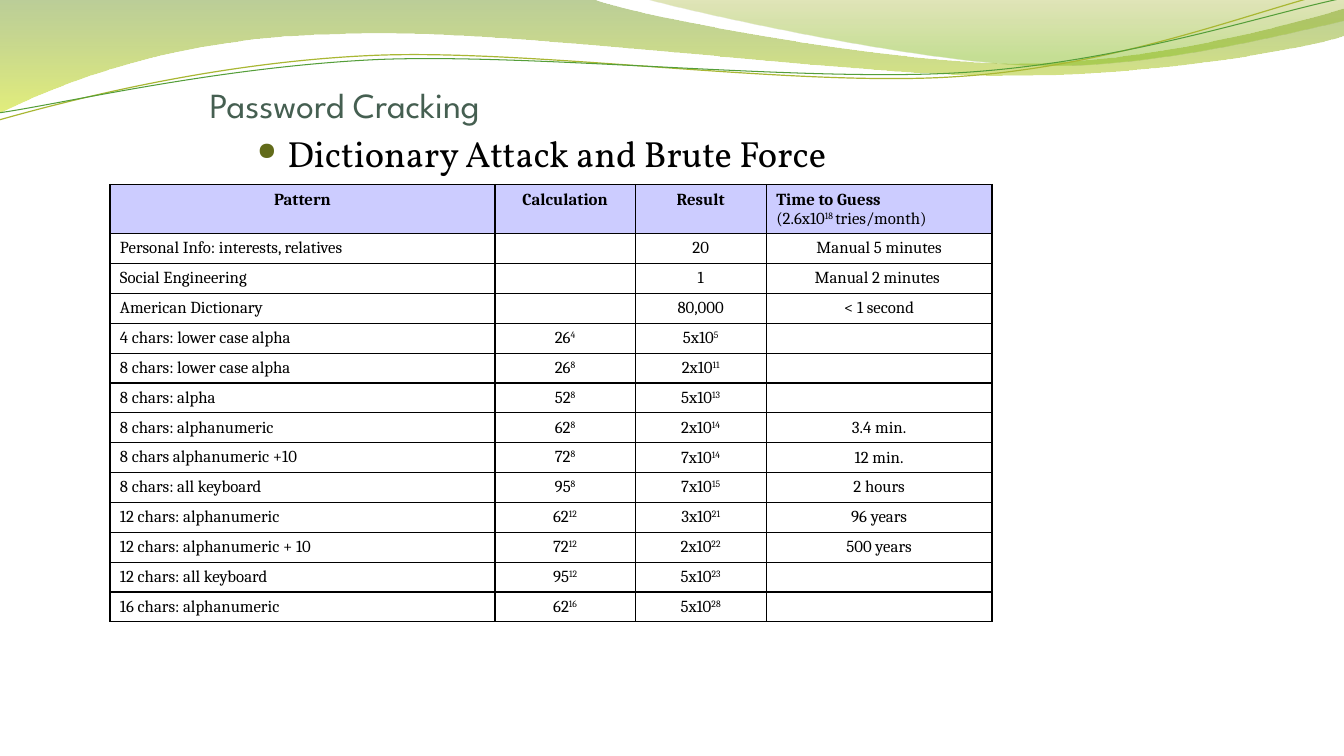
from lxml.etree import SubElement
from pptx import Presentation
from pptx.dml.color import RGBColor
from pptx.enum.text import MSO_ANCHOR, PP_ALIGN
from pptx.oxml import parse_xml
from pptx.oxml.ns import nsdecls, qn
from pptx.util import Inches, Pt

TITLE = "Password Cracking"
SUBTITLE = "Dictionary Attack and Brute Force"

# Text between a pair of ^ marks is superscript.
ROWS = [
    ("Pattern", "Calculation", "Result", "Time to Guess\n(2.6x10^18 ^tries/month)"),
    ("Personal Info: interests, relatives", "", "20", "Manual 5 minutes"),
    ("Social Engineering", "", "1", "Manual 2 minutes "),
    ("American Dictionary", "", "80,000", "< 1 second"),
    ("4 chars: lower case alpha", "26^4", "5x10^5", ""),
    ("8 chars: lower case alpha", "26^8", "2x10^11", ""),
    ("8 chars: alpha", "52^8", "5x10^13", ""),
    ("8 chars: alphanumeric", "62^8", "2x10^14", "3.4 min."),
    ("8 chars alphanumeric +10", "72^8", "7x10^14", "12 min."),
    ("8 chars: all keyboard", "95^8", "7x10^15", "2 hours"),
    ("12 chars: alphanumeric", "62^12", "3x10^21", "96 years"),
    ("12 chars: alphanumeric + 10", "72^12", "2x10^22", "500 years"),
    ("12 chars: all keyboard", "95^12", "5x10^23", ""),
    ("16 chars: alphanumeric", "62^16", "5x10^28", ""),
]
COLUMN_WIDTHS = [3.82, 1.39, 1.3, 2.24]
TABLE_HEIGHT, HEADER_HEIGHT = 4.34, 0.49
FIRST_POWER_ROW = 4

# A pair is a straight step, six numbers are a Bézier step.
BANDS = [
    {"outline": [(0, 0), (5.87, -0.01), (6.34, 0.17, 8.84, 0.63, 10.11, 0.63),
                 (11.37, 0.63, 12.77, 0.26, 13.33, 0.09), (13.34, 0.36),
                 (13.11, 0.44, 11.59, 0.76, 9.94, 0.75),
                 (8.29, 0.75, 5.09, 0.28, 3.43, 0.34),
                 (1.72, 0.36, 0.61, 0.83, -0.02, 1.13), (0, 0)],
     "stops": [(0, "69921C", 45), (1, "CCE10F", 55)]},
    {"outline": [(6.38, -0.01), (6.79, 0.11, 9.09, 0.62, 10.25, 0.65),
                 (11.4, 0.69, 12.82, 0.32, 13.33, 0.21), (13.33, 0), (6.38, -0.01)],
     "stops": [(0, "9BAA1A", 30), (0.8, "81BA16", 45)]},
]
STRANDS = [
    {"outline": [(-0.01, 1.19), (0.63, 1.01, 2.1, 0.62, 3.69, 0.55),
                 (5.27, 0.48, 7.89, 0.87, 9.49, 0.76),
                 (11.1, 0.66, 12.51, 0.08, 13.3, -0.1)],
     "color": "A9B733", "width": 0.85},
    {"outline": [(-0.01, 1.12), (0.62, 1.03, 2.18, 0.66, 3.77, 0.59),
                 (5.37, 0.53, 7.96, 0.82, 9.55, 0.72),
                 (11.14, 0.62, 12.55, 0.14, 13.33, -0.02)],
     "color": "549E39", "width": 0.75},
]


def rgb(code):
    return RGBColor.from_string(code)


def style_font(font, color="000000", **values):
    for key, value in values.items():
        setattr(font, key, value)
    font.color.rgb = rgb(color)


def add_outline(shapes, outline, closed):
    """Draw the steps as a polygon, then join each Bézier step's three points into a curve."""
    points = [(Inches(step[i]), Inches(step[i + 1]))
              for step in outline for i in range(0, len(step), 2)]
    builder = shapes.build_freeform(*points[0])
    builder.add_line_segments(points[1:], close=closed)
    wave = builder.convert_to_shape()
    wave.shadow.inherit = False
    segments = iter(list(wave._element.iter(qn("a:lnTo"))))
    for step in outline[1:]:
        segment = next(segments)
        if len(step) == 6:
            segment.addprevious(curve := parse_xml(f'<a:cubicBezTo {nsdecls("a")}/>'))
            for part in (segment, next(segments), next(segments)):
                curve.append(part[0])
                part.getparent().remove(part)
    return wave


def add_waves(shapes):
    for band in BANDS:
        wave = add_outline(shapes, band["outline"], True)
        wave.line.fill.background()
        wave.fill.gradient()
        wave.fill.gradient_angle = 270
        for stop, (position, color, opacity) in zip(wave.fill.gradient_stops, band["stops"]):
            stop.position = position
            stop.color.rgb = rgb(color)
            color_xml = stop._gs.find(qn("a:srgbClr"))
            SubElement(color_xml, qn("a:alpha")).set("val", str(opacity * 1000))
    for strand in STRANDS:
        wave = add_outline(shapes, strand["outline"], False)
        wave.fill.background()
        wave.line.color.rgb = rgb(strand["color"])
        wave.line.width = Pt(strand["width"])


def place_title(shapes):
    title = shapes.title
    shapes._spTree.append(title._element)  # in front of the waves
    title.left, title.top, title.width, title.height = map(Inches, (2.08, 0.75, 6.58, 0.5))
    frame = title.text_frame
    frame.text = TITLE
    frame.vertical_anchor = MSO_ANCHOR.BOTTOM
    frame.margin_left = frame.margin_right = frame.margin_bottom = 0
    frame.margin_top = Inches(0.05)
    line = frame.paragraphs[0]
    line.alignment = PP_ALIGN.LEFT
    style_font(line.runs[0].font, "455F51", name="League Spartan", size=Pt(25.2))


def add_subtitle(shapes):
    frame = shapes.add_textbox(*map(Inches, (1, 1.25, 8.75, 0.53))).text_frame
    frame.word_wrap = True
    line = frame.paragraphs[0]
    line.alignment = PP_ALIGN.CENTER
    run = line.add_run()
    run.text = SUBTITLE
    style_font(run.font, name="Vollkorn", size=Pt(26))
    properties = line._p.get_or_add_pPr()
    properties.set("marL", str(Inches(0.3)))
    properties.set("indent", str(Inches(-0.3)))
    for xml in ('<a:spcBef {}><a:spcPct val="20000"/></a:spcBef>',
                '<a:buClr {}><a:srgbClr val="626B1A"/></a:buClr>',
                '<a:buSzPct {} val="68000"/>',
                '<a:buChar {} char="●"/>'):
        properties.append(parse_xml(xml.format(nsdecls("a"))))


def add_borders(cell):
    for side in ("lnL", "lnR", "lnT", "lnB"):
        cell._tc.get_or_add_tcPr().append(parse_xml(
            f'<a:{side} {nsdecls("a")} w="{Pt(1)}"><a:solidFill>'
            f'<a:srgbClr val="000000"/></a:solidFill></a:{side}>'))


def fill_cell(cell, text, row, column):
    header = row == 0
    tight = row >= FIRST_POWER_ROW and column >= 2 and text != ""
    add_borders(cell)
    if header:
        cell.fill.solid()
        cell.fill.fore_color.rgb = rgb("CCCCFF")
    else:
        cell.fill.background()
    cell.margin_left = cell.margin_right = Inches(0.1)
    cell.margin_top = Inches(0.06 if tight or header else 0.05)
    cell.margin_bottom = Inches(0.03)
    left = column == (3 if header else 0)
    for index, content in enumerate(text.split("\n")):
        frame = cell.text_frame
        line = frame.add_paragraph() if index else frame.paragraphs[0]
        line.alignment = PP_ALIGN.LEFT if left else PP_ALIGN.CENTER
        line.line_spacing = 0.93 if tight else 0.98
        if not content:
            line._p.get_or_add_endParaRPr().set("sz", "1200")
            continue
        for part, piece in enumerate(content.split("^")):
            if not piece:
                continue
            run = line.add_run()
            run.text = piece
            style_font(run.font, name="Cambria", size=Pt(12), bold=header and index == 0)
            if part % 2:
                run.font._element.set("baseline", "30000")


def add_pattern_table(shapes):
    body_rows = len(ROWS) - 1
    heights = [HEADER_HEIGHT] + [(TABLE_HEIGHT - HEADER_HEIGHT) / body_rows] * body_rows
    table = shapes.add_table(len(ROWS), len(COLUMN_WIDTHS), *map(
        Inches, (1.09, 1.83, sum(COLUMN_WIDTHS), TABLE_HEIGHT))).table
    table.first_row = table.horz_banding = False
    for column, width in zip(table.columns, COLUMN_WIDTHS):
        column.width = Inches(width)
    for row, (height, texts) in enumerate(zip(heights, ROWS)):
        table.rows[row].height = Inches(height)
        for column, text in enumerate(texts):
            fill_cell(table.cell(row, column), text, row, column)


def main():
    deck = Presentation()
    deck.slide_width, deck.slide_height = Inches(13.33), Inches(7.5)
    shapes = deck.slides.add_slide(deck.slide_layouts[5]).shapes
    add_waves(shapes)
    place_title(shapes)
    add_subtitle(shapes)
    add_pattern_table(shapes)
    deck.save("out.pptx")


if __name__ == "__main__":
    main()
